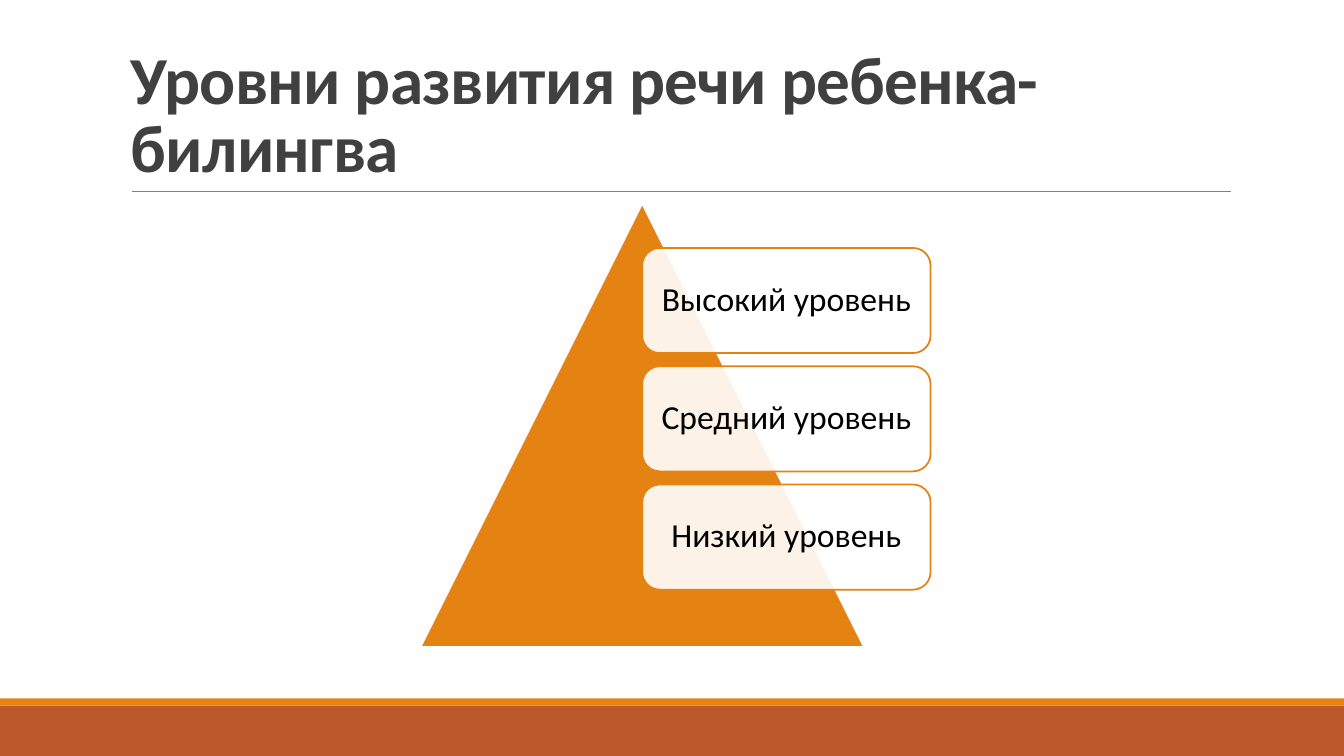
from pptx import Presentation
from pptx import util as u
from pptx.dml.color import RGBColor
from pptx.enum import shapes, text
from pptx.oxml.ns import qn
from lxml import etree

WIDE, HIGH = 13.33, 7.5
LEVELS = ["Высокий уровень", "Средний уровень", "Низкий уровень"]
KIND = shapes.MSO_SHAPE


def paint(target, code):
    target.solid()
    target.fore_color.rgb = RGBColor.from_string(code)


def style(para, size, code, lead):
    para.font.size = u.Pt(size)
    para.font.name = "Calibri"
    paint(para.font.fill, code)
    para.line_spacing = lead


def add_form(slide, kind, box, fill, edge=None):
    form = slide.shapes.add_shape(kind, *map(u.Inches, box))
    form.shadow.inherit = False
    paint(form.fill, fill)
    if edge:
        paint(form.line.fill, edge)
        form.line.width = u.Pt(1.25)
    else:
        form.line.fill.background()
    return form


def add_foot(slide, box):
    left, top, width, height = box
    strip = 0.07
    add_form(slide, KIND.RECTANGLE, (left, top + strip, width, height - strip), "BD582C")
    add_form(slide, KIND.RECTANGLE, (left, top, width, strip), "E48312")


def add_title(slide, box, words):
    left, top, width, height = box
    base = u.Inches(top + height)
    rule = slide.shapes.add_connector(
        shapes.MSO_CONNECTOR.STRAIGHT,
        u.Inches(left + 0.11), base, u.Inches(left + width + 0.01), base)
    paint(rule.line.fill, "808080")
    rule.line.width = u.Pt(0.5)
    etree.SubElement(rule._element.spPr, qn("a:effectLst"))

    frame = slide.shapes.add_textbox(*map(u.Inches, box)).text_frame
    frame.word_wrap = True
    frame.vertical_anchor = text.MSO_ANCHOR.BOTTOM
    para = frame.paragraphs[0]
    run = para.add_run()
    run.text = words
    style(para, 48, "404040", 0.85)
    para.font.bold = True
    run.font._element.set("spc", "-50")


def add_level(slide, box, words):
    card = add_form(slide, KIND.ROUNDED_RECTANGLE, box, "FFFFFF", "E48312")
    tone = card.fill._xPr.find(qn("a:solidFill"))[0]
    etree.SubElement(tone, qn("a:alpha"), val="90000")
    frame = card.text_frame
    frame.word_wrap = True
    frame.vertical_anchor = text.MSO_ANCHOR.MIDDLE
    frame.margin_left = frame.margin_right = u.Inches(0.1)
    frame.margin_top = frame.margin_bottom = u.Inches(0.1)
    para = frame.paragraphs[0]
    para.text = words
    para.alignment = text.PP_ALIGN.CENTER
    style(para, 24, "000000", 0.9)


def add_peak(slide, box, levels):
    left, top, width, height = box
    add_form(slide, KIND.ISOSCELES_TRIANGLE, box, "E48312", "FFFFFF")
    pitch = height * 0.8 / len(levels)
    for row, words in enumerate(levels):
        place = (left + width / 2, top + height * 0.1 + row * pitch,
                 width * 0.65, pitch * 8 / 9)
        add_level(slide, place, words)


def main():
    deck = Presentation()
    deck.slide_width, deck.slide_height = u.Inches(WIDE), u.Inches(HIGH)
    slide = deck.slides.add_slide(deck.slide_layouts[6])
    add_foot(slide, (0, 6.93, WIDE, HIGH - 6.93))
    add_title(slide, (1.2, 0.31, 11, 1.59), "Уровни развития речи ребенка-билингва")
    add_peak(slide, (4.17, 2.02, 4.4, 4.4), LEVELS)
    deck.save("out.pptx")


if __name__ == "__main__":
    main()
